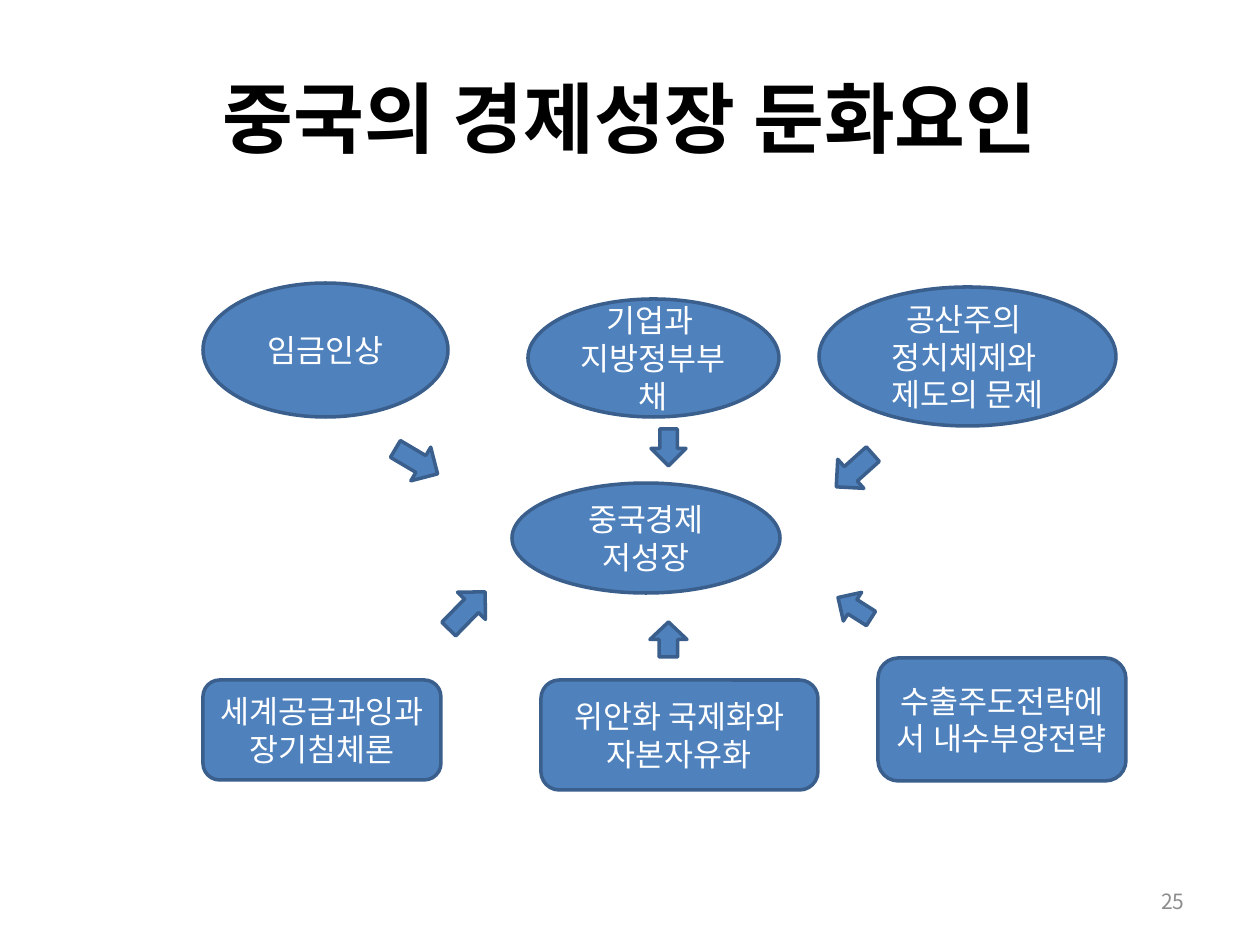
from lxml import etree
from pptx import Presentation
from pptx.dml.color import RGBColor
from pptx.enum.shapes import MSO_SHAPE
from pptx.enum.text import MSO_ANCHOR, PP_ALIGN
from pptx.oxml.ns import qn
from pptx.util import Pt

OVAL, CARD, ARROW = MSO_SHAPE.OVAL, MSO_SHAPE.ROUNDED_RECTANGLE, MSO_SHAPE.RIGHT_ARROW
CENTER, RIGHT = PP_ALIGN.CENTER, PP_ALIGN.RIGHT
MIDDLE = MSO_ANCHOR.MIDDLE
PX = 914400 / 126
FONT = "Noto Sans CJK KR"
COLORS = {"title": "000000", "label": "FFFFFF", "number": "8C8C8C",
          "fill": "4F81BD", "outline": "3A5F8C"}
FORMATS = {"title": {"size": Pt(44), "bold": True},
           "label": {"size": Pt(18)},
           "number": {"size": Pt(12)}}

FACTORS = [
    (OVAL, (309, 200, 268, 110), ["중국경제 저성장"]),
    (OVAL, (0, 0, 245, 134), ["임금인상"]),
    (OVAL, (325, 16, 251, 118), ["기업과 ", "지방정부부채"]),
    (OVAL, (616, 4, 297, 139), ["공산주의 ", "정치체제와 ", "제도의 문제"]),
    (CARD, (0, 397, 238, 100), ["세계공급과잉과 장기침체론"]),
    (CARD, (338, 397, 277, 110), ["위안화 국제화와 자본자유화"]),
    (CARD, (675, 375, 248, 123), ["수출주도전략에서 내수부양전략"]),
]
ARROWS = [
    ((189, 159, 49, 39), 30.6),
    ((447, 147, 37, 35), 90),
    ((627, 168, 49, 39), 138.1),
    ((238, 308, 52, 39), 314.3),
    ((448, 338, 35, 37), 270),
    ((632, 308, 39, 34), 212.4),
]


def emu(box):
    """Turn a box in px into EMU."""
    return [round(length * PX) for length in box]


def write(frame, lines, style, align=CENTER):
    """Write one paragraph per line in the given style."""
    frame.word_wrap = True
    frame.vertical_anchor = MIDDLE
    for index, line in enumerate(lines):
        paragraph = frame.add_paragraph() if index else frame.paragraphs[0]
        paragraph.alignment = align
        run = paragraph.add_run()
        run.text = line
        for attribute, value in FORMATS[style].items():
            setattr(run.font, attribute, value)
        run.font.color.rgb = RGBColor.from_string(COLORS[style])
        run.font.name = FONT
        east_asian = etree.SubElement(run.font._element, qn("a:ea"))
        east_asian.set("typeface", FONT)


def add_block(slide, kind, origin, box):
    """Add a filled, outlined shape at a box relative to the origin."""
    left, top, width, height = box
    block = slide.shapes.add_shape(
        kind, *emu((origin[0] + left, origin[1] + top, width, height)))
    block.shadow.inherit = False
    block.fill.solid()
    block.fill.fore_color.rgb = RGBColor.from_string(COLORS["fill"])
    block.line.color.rgb = RGBColor.from_string(COLORS["outline"])
    block.line.width = Pt(2)
    return block


def add_title(slide, box, text):
    """Place the heading in the title placeholder."""
    title = slide.shapes.title
    title.left, title.top, title.width, title.height = emu(box)
    write(title.text_frame, [text], "title")


def add_page_number(slide, box, number):
    """Place the page number, aligned right."""
    page_number = slide.shapes.add_textbox(*emu(box))
    write(page_number.text_frame, [number], "number", RIGHT)


def add_diagram(slide, origin):
    """Draw the slow-growth hub, its factors and the arrows between them."""
    for kind, box, lines in FACTORS:
        write(add_block(slide, kind, origin, box).text_frame, lines, "label")
    for box, angle in ARROWS:
        add_block(slide, ARROW, origin, box).rotation = angle


def main():
    """Build and save the slide."""
    deck = Presentation()
    deck.slide_width, deck.slide_height = emu((1260, 945))
    slide = deck.slides.add_slide(deck.slide_layouts[5])
    add_title(slide, (63, 38, 1134, 157), "중국의 경제성장 둔화요인")
    add_page_number(slide, (903, 876, 294, 50), "25")
    add_diagram(slide, (203, 283))
    deck.save("out.pptx")


if __name__ == "__main__":
    main()
